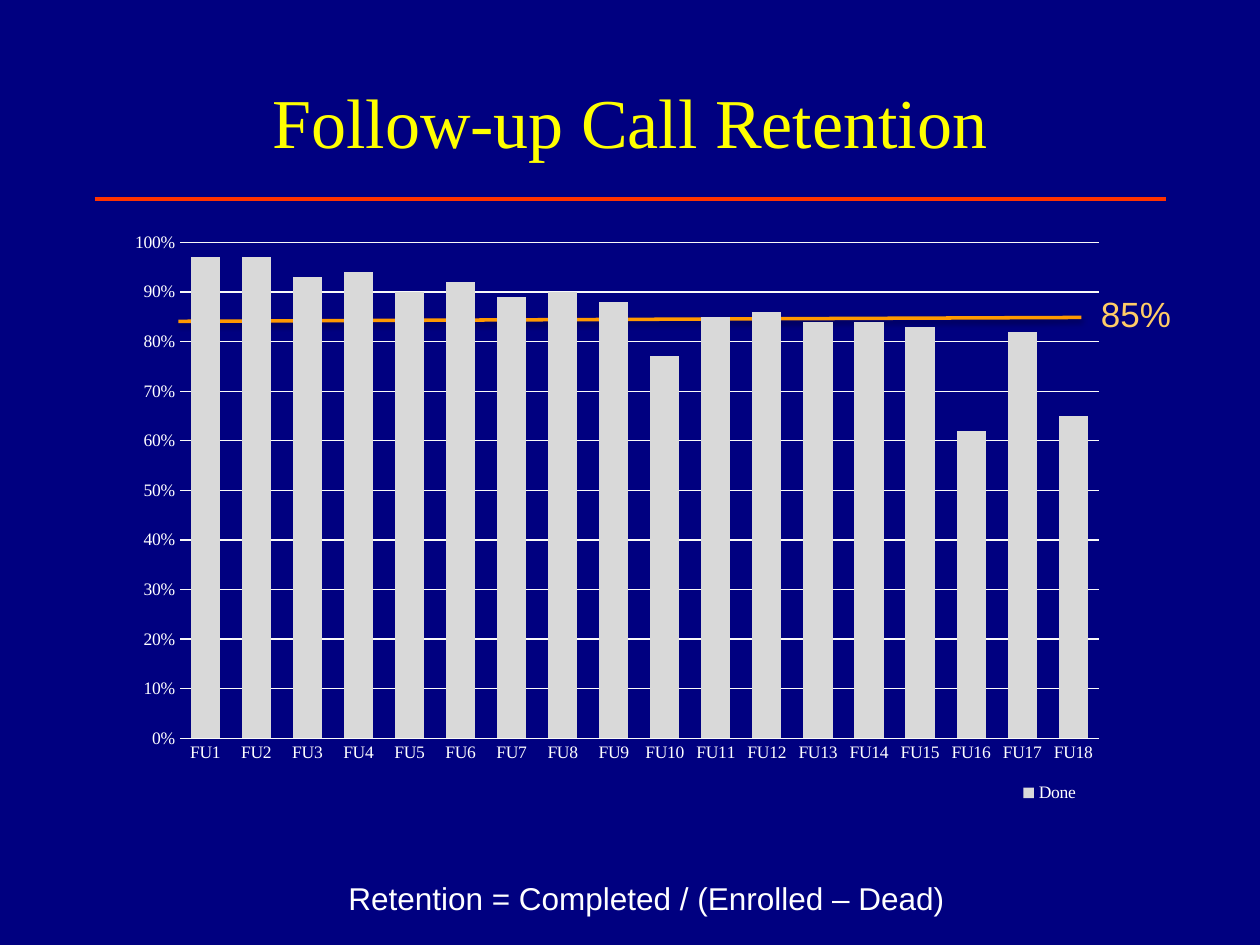
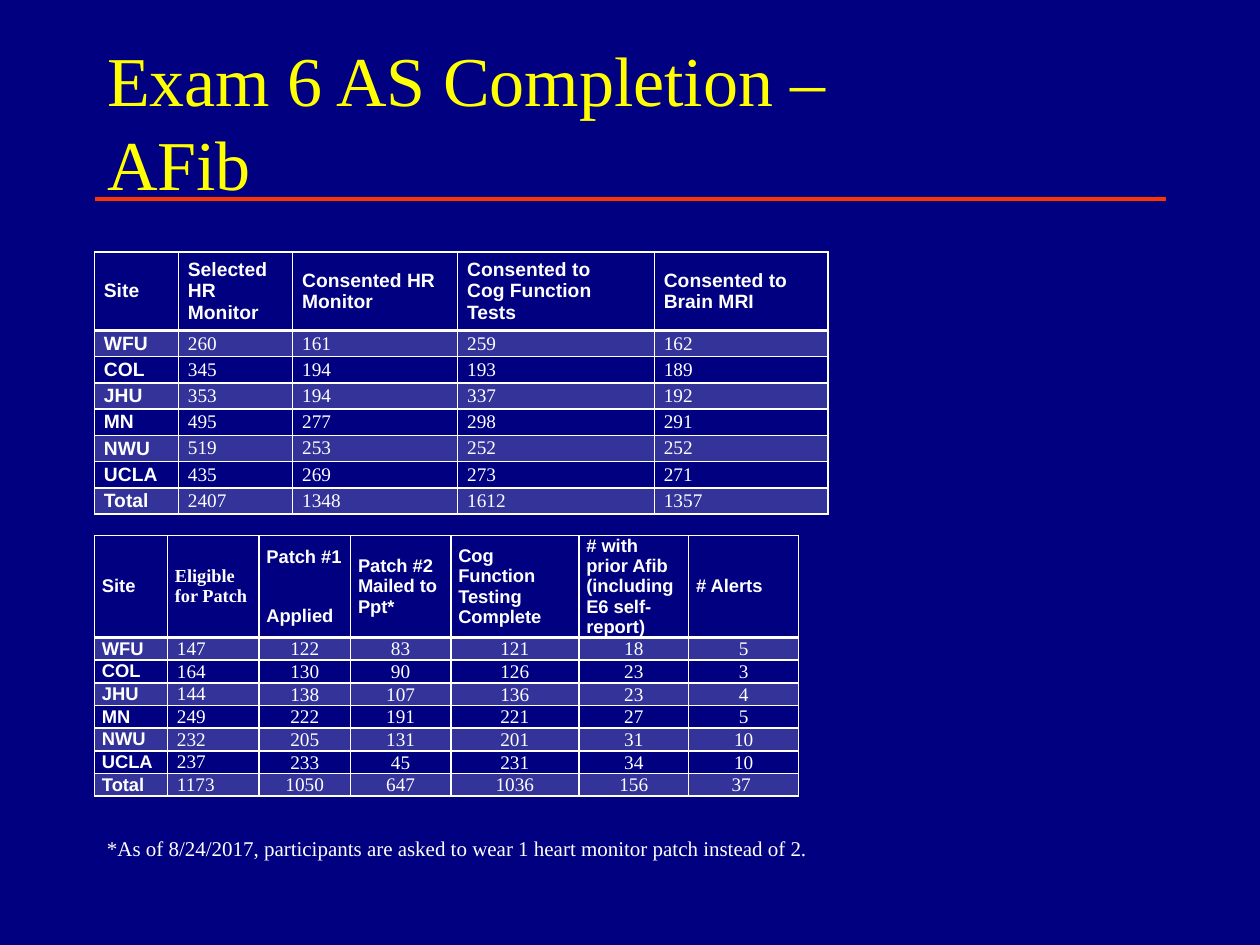
from dataclasses import dataclass

from lxml.etree import SubElement
from pptx import Presentation
from pptx.chart.data import CategoryChartData
from pptx.dml.color import RGBColor
from pptx.enum.chart import XL_CHART_TYPE, XL_LEGEND_POSITION, XL_TICK_MARK
from pptx.enum.shapes import MSO_CONNECTOR
from pptx.enum.text import MSO_ANCHOR, PP_ALIGN
from pptx.oxml import parse_xml
from pptx.oxml.ns import nsdecls, qn
from pptx.util import Pt


@dataclass(frozen=True)
class Theme:
    background: str = "000080"
    title: str = "FFFF00"
    text: str = "FFFFFF"
    rule: str = "FF3300"
    target: str = "FF9900"
    target_label: str = "FFCC66"
    bar: str = "D9D9D9"
    grid: str = "F9F9F9"
    serif: str = "Times New Roman"
    sans: str = "Arial"
    title_size: float = 40
    target_size: float = 20
    formula_size: float = 18
    note_size: float = 12
    cell_size: float = 11
    small_head_size: float = 10.5
    chart_size: float = 10
    line_width: float = 2
    thin_width: float = 0.75
    band_opacity: int = 20


@dataclass(frozen=True)
class Box:
    left: float
    top: float
    width: float
    height: float

    def lengths(self):
        return Pt(self.left), Pt(self.top), Pt(self.width), Pt(self.height)


@dataclass(frozen=True)
class TableStyle:
    """What differs between the two tables."""
    columns: tuple
    header_height: float
    row_height: float
    head_size: float
    head_margin: float
    centred_from: int
    serif_heads: tuple = ()


THEME = Theme()
TITLE_BOX = Box(54, 23.75, 612, 90)
CELL_MARGIN = 5.4

RETENTION = [97, 97, 93, 94, 90, 92, 89, 90, 88,
             77, 85, 86, 84, 84, 83, 62, 82, 65]

SITES = ["WFU", "COL", "JHU", "MN", "NWU", "UCLA", "Total"]

CONSENT_HEADS = ["Site", "Selected HR \nMonitor", "Consented HR \nMonitor",
                 "Consented to \nCog Function Tests", "Consented to \nBrain MRI"]
CONSENT_COUNTS = [
    (260, 161, 259, 162),
    (345, 194, 193, 189),
    (353, 194, 337, 192),
    (495, 277, 298, 291),
    (519, 253, 252, 252),
    (435, 269, 273, 271),
    (2407, 1348, 1612, 1357),
]
CONSENT_STYLE = TableStyle((48, 65.3, 94.3, 112.4, 99.2), 44.8, 15,
                           THEME.cell_size, CELL_MARGIN, centred_from=5)

PATCH_HEADS = ["Site", "Eligible for Patch", "Patch #1 \nApplied",
               "Patch #2 \nMailed to Ppt*", "Cog Function \nTesting Complete",
               "# with prior Afib \n(including E6 self-report)", "# Alerts"]
PATCH_COUNTS = [
    (147, 122, 83, 121, 18, 5),
    (164, 130, 90, 126, 23, 3),
    (144, 138, 107, 136, 23, 4),
    (249, 222, 191, 221, 27, 5),
    (232, 205, 131, 201, 31, 10),
    (237, 233, 45, 231, 34, 10),
    (1173, 1050, 647, 1036, 156, "37 "),
]
PATCH_STYLE = TableStyle((41.7, 52.3, 52.3, 57.3, 73.2, 62.8, 62.8), 50.4, 11.5,
                         THEME.small_head_size, 4.3, centred_from=2, serif_heads=(1,))


def rgb(colour):
    return RGBColor.from_string(colour)


def write(frame, text, size, font, colour=THEME.text, bold=False, align=PP_ALIGN.LEFT):
    """Fill the first paragraph, one run for each line."""
    paragraph = frame.paragraphs[0]
    paragraph.alignment = align
    for index, line in enumerate(text.split("\n")):
        if index:
            paragraph.add_line_break()
        run = paragraph.add_run()
        run.text = line
        run.font.size = Pt(size)
        run.font.name = font
        run.font.bold = bold
        run.font.color.rgb = rgb(colour)


def add_text(slide, box, text, size, font, colour=THEME.text):
    frame = slide.shapes.add_textbox(*box.lengths()).text_frame
    frame.word_wrap = True
    write(frame, text, size, font, colour)


def add_line(slide, start, end, colour):
    """Draw a straight line and return it with its empty effect list."""
    line = slide.shapes.add_connector(
        MSO_CONNECTOR.STRAIGHT, *(Pt(length) for length in (*start, *end)))
    line.line.color.rgb = rgb(colour)
    line.line.width = Pt(THEME.line_width)
    return line, SubElement(line.element.spPr, qn("a:effectLst"))


def set_up_master(presentation, slide):
    """Give the master its background and the rule below the title."""
    master = presentation.slide_master
    master.background.fill.solid()
    master.background.fill.fore_color.rgb = rgb(THEME.background)
    bottom = TITLE_BOX.top + TITLE_BOX.height
    rule, _ = add_line(slide, (TITLE_BOX.left, bottom),
                       (TITLE_BOX.left + TITLE_BOX.width, bottom), THEME.rule)
    rule.element.nvCxnSpPr.cNvPr.set("id", "20")
    master.shapes.element.append(rule.element)


def add_titled_slide(presentation, text, align):
    slide = presentation.slides.add_slide(presentation.slide_layouts[5])
    title = slide.shapes.title
    title.left, title.top, title.width, title.height = TITLE_BOX.lengths()
    title.text_frame.word_wrap = True
    title.text_frame.vertical_anchor = MSO_ANCHOR.MIDDLE
    write(title.text_frame, text, THEME.title_size, THEME.serif, THEME.title, align=align)
    return slide


def layout_xml(x, y, width, height, inner=False):
    """Manual chart layout, in fractions of the chart."""
    target = '<c:layoutTarget val="inner"/>' if inner else ""
    return parse_xml(
        f'<c:layout {nsdecls("c")}><c:manualLayout>{target}'
        '<c:xMode val="edge"/><c:yMode val="edge"/>'
        f'<c:x val="{x}"/><c:y val="{y}"/><c:w val="{width}"/><c:h val="{height}"/>'
        '</c:manualLayout></c:layout>')


def add_retention_chart(slide, box):
    data = CategoryChartData(number_format="0%")
    data.categories = [f"FU{number}" for number in range(1, len(RETENTION) + 1)]
    data.add_series("Done", [percent / 100 for percent in RETENTION])
    chart = slide.shapes.add_chart(
        XL_CHART_TYPE.COLUMN_CLUSTERED, *box.lengths(), data).chart
    chart.has_title = False
    chart.font.size = Pt(THEME.chart_size)
    chart.font.name = THEME.serif
    chart.font.color.rgb = rgb(THEME.text)

    # Columns
    plot = chart.plots[0]
    plot.gap_width = 75
    plot.overlap = -25
    plot.vary_by_categories = False
    fill = plot.series[0].format.fill
    fill.solid()
    fill.fore_color.rgb = rgb(THEME.bar)

    # Axes
    values, categories = chart.value_axis, chart.category_axis
    values.minimum_scale, values.maximum_scale, values.major_unit = 0, 1, 0.1
    values.tick_labels.number_format = "0%"
    values.tick_labels.number_format_is_linked = False
    values.has_major_gridlines = True
    values.format.line.fill.background()
    for axis in (values, categories):
        axis.major_tick_mark = axis.minor_tick_mark = XL_TICK_MARK.NONE
    for line in (values.major_gridlines.format.line, categories.format.line):
        line.color.rgb = rgb(THEME.grid)
        line.width = Pt(THEME.thin_width)

    # Legend and plot positions
    chart.has_legend = True
    chart.legend.position = XL_LEGEND_POSITION.BOTTOM
    chart.legend.include_in_layout = False
    chart.element.xpath("c:chart/c:legend/c:legendPos")[0].addnext(
        layout_xml(0.89, 0.94, 0.08, 0.05))
    plot_area = chart.element.xpath("c:chart/c:plotArea")[0]
    for layout in plot_area.xpath("c:layout"):
        plot_area.remove(layout)
    plot_area.insert(0, layout_xml(0.064, 0.037, 0.915, 0.836, inner=True))


def add_target_line(slide, box):
    """Slightly rising line across the box, with its label at the right."""
    right = box.left + box.width
    _, effects = add_line(slide, (box.left, box.top + box.height), (right, box.top),
                          THEME.target)
    effects.append(parse_xml(
        f'<a:outerShdw {nsdecls("a")} blurRad="{Pt(3.1)}" dist="{Pt(1.6)}" dir="5400000"'
        ' rotWithShape="0"><a:srgbClr val="000000"><a:alpha val="38000"/></a:srgbClr>'
        '</a:outerShdw>'))
    add_text(slide, Box(right + 4, box.top - 18, 72, 31.5), "85%",
             THEME.target_size, THEME.sans, THEME.target_label)


def style_cell(cell, row, margin):
    """Borders, then a see-through band on every other row."""
    properties = cell._tc.get_or_add_tcPr()
    for side in "LRTB":
        under_header = (row, side) in ((0, "B"), (1, "T"))
        properties.append(parse_xml(
            f'<a:ln{side} {nsdecls("a")} w="{Pt(2 if under_header else 1)}"><a:solidFill>'
            f'<a:srgbClr val="{THEME.text}"/></a:solidFill></a:ln{side}>'))
    if row % 2:
        cell.fill.solid()
        cell.fill.fore_color.rgb = rgb(THEME.text)
        colour = properties.xpath("a:solidFill/a:srgbClr")[0]
        SubElement(colour, qn("a:alpha")).set("val", str(THEME.band_opacity * 1000))
    else:
        cell.fill.background()
    cell.vertical_anchor = MSO_ANCHOR.MIDDLE
    cell.margin_left = cell.margin_right = Pt(margin)
    cell.margin_top = cell.margin_bottom = 0


def add_site_table(slide, left, top, heads, counts, style):
    height = style.header_height + style.row_height * len(SITES)
    box = Box(left, top, sum(style.columns), height)
    table = slide.shapes.add_table(len(SITES) + 1, len(heads), *box.lengths()).table
    table.horz_banding = False
    for column, width in zip(table.columns, style.columns):
        column.width = Pt(width)
    for index, row in enumerate(table.rows):
        row.height = Pt(style.row_height if index else style.header_height)

    rows = [heads] + [(site, *numbers) for site, numbers in zip(SITES, counts)]
    for row, values in enumerate(rows):
        for column, value in enumerate(values):
            cell = table.cell(row, column)
            is_head = row == 0 or column == 0
            centred = not is_head and column >= style.centred_from
            margin = style.head_margin if is_head else 0.7 if centred else CELL_MARGIN
            style_cell(cell, row, margin)
            if centred:
                cell.margin_top = Pt(0.7)
            serif = not is_head or (row == 0 and column in style.serif_heads)
            write(cell.text_frame, str(value),
                  style.head_size if is_head else THEME.cell_size,
                  THEME.serif if serif else THEME.sans, bold=is_head,
                  align=PP_ALIGN.CENTER if centred else PP_ALIGN.LEFT)


def build_retention_slide(presentation):
    slide = add_titled_slide(presentation, "Follow-up Call Retention", PP_ALIGN.CENTER)
    set_up_master(presentation, slide)
    add_text(slide, Box(192, 499, 408, 29), "Retention = Completed / (Enrolled – Dead)",
             THEME.formula_size, THEME.sans)
    add_target_line(slide, Box(102, 181.4, 516, 2.2))
    add_retention_chart(slide, Box(66, 126, 574, 339))


def build_completion_slide(presentation):
    slide = add_titled_slide(presentation, "Exam 6 AS Completion – \nAFib", PP_ALIGN.LEFT)
    left = TITLE_BOX.left
    add_site_table(slide, left, 144, CONSENT_HEADS, CONSENT_COUNTS, CONSENT_STYLE)
    add_site_table(slide, left, 306, PATCH_HEADS, PATCH_COUNTS, PATCH_STYLE)
    add_text(slide, Box(left, 474, 450, 21.8),
             "*As of 8/24/2017, participants are asked to wear 1 heart monitor patch"
             " instead of 2.", THEME.note_size, THEME.serif)


def main():
    presentation = Presentation()
    presentation.slide_width, presentation.slide_height = Pt(720), Pt(540)
    build_retention_slide(presentation)
    build_completion_slide(presentation)
    presentation.save("out.pptx")


if __name__ == "__main__":
    main()
